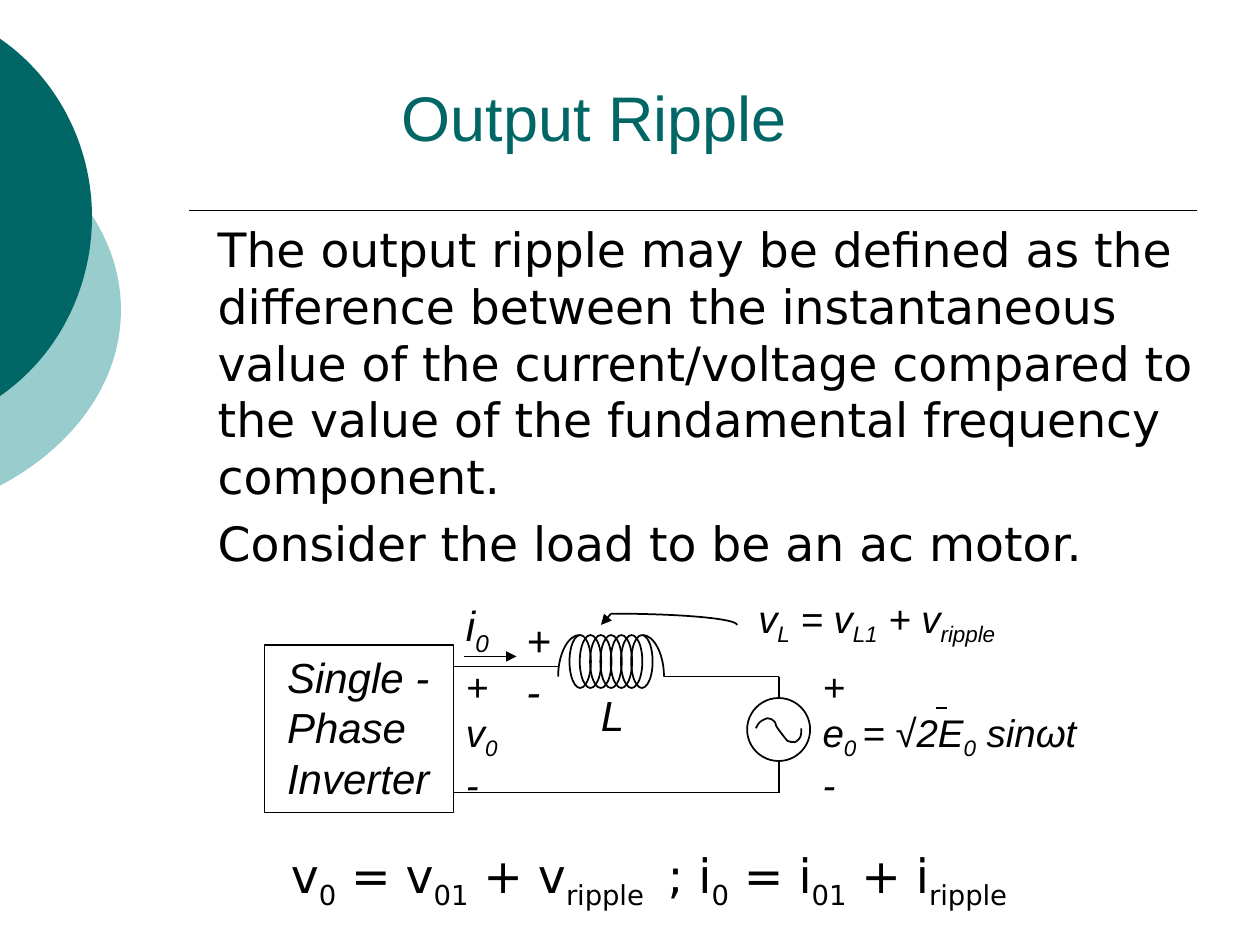
import pptx
import pptx.util
import pptx.dml.color
import pptx.enum.shapes
import pptx.enum.text
import pptx.oxml
import pptx.oxml.ns

Inches = pptx.util.Inches
Pt = pptx.util.Pt
MSO_SHAPE = pptx.enum.shapes.MSO_SHAPE
COLORS = {"teal": "006666", "mint": "99CCCC", "ink": "000000"}


def color(name):
    return pptx.dml.color.RGBColor.from_string(COLORS[name])


def write_text(sp, lines, size=24, font="Arial", ink="ink", italic=False,
               anchor=pptx.enum.text.MSO_ANCHOR.TOP, gap=0):
    tf = sp.text_frame
    tf.word_wrap = True
    tf.auto_size = pptx.enum.text.MSO_AUTO_SIZE.NONE
    tf.vertical_anchor = anchor
    for i, line in enumerate(lines):
        p = tf.paragraphs[0] if i == 0 else tf.add_paragraph()
        p.alignment = pptx.enum.text.PP_ALIGN.LEFT
        p.space_before = Pt(gap if i else 0)
        for j, part in enumerate(line.split("|")):
            if not part:
                continue
            r = p.add_run()
            r.text = part
            r.font.size = Pt(size)
            r.font.name = font
            r.font.italic = italic
            r.font.color.rgb = color(ink)
            if j % 2:
                r.font._element.set("baseline", "-25000")


def add_text(s, x, y, w, h, lines, **fmt):
    sp = s.shapes.add_textbox(Inches(x), Inches(y), Inches(w), Inches(h))
    write_text(sp, lines, **fmt)


def style(sp, fill=None, line="ink"):
    sp.shadow.inherit = False
    if fill:
        sp.fill.solid()
        sp.fill.fore_color.rgb = color(fill)
    else:
        sp.fill.background()
    if line:
        sp.line.color.rgb = color(line)
        sp.line.width = Pt(1)
    else:
        sp.line.fill.background()


def add_outline(s, g, x, y, w, h):
    sp = s.shapes.add_shape(g, Inches(x), Inches(y), Inches(w), Inches(h))
    style(sp)


def add_line(s, x1, y1, x2, y2, arrow=False):
    sp = s.shapes.add_connector(pptx.enum.shapes.MSO_CONNECTOR.STRAIGHT,
                                Inches(x1), Inches(y1), Inches(x2), Inches(y2))
    sp.line.color.rgb = color("ink")
    sp.line.width = Pt(1)
    if arrow:
        sp.line._get_or_add_ln().append(pptx.oxml.parse_xml(
            '<a:tailEnd %s type="triangle"/>' % pptx.oxml.ns.nsdecls("a")))
    sp._element.spPr.append(pptx.oxml.parse_xml(
        "<a:effectLst %s/>" % pptx.oxml.ns.nsdecls("a")))


def add_curve(s, x, y, w, h, points, closed=False, fill=None, line="ink"):
    pts = [(Inches(px), Inches(py)) for px, py in points]
    fb = s.shapes.build_freeform(*pts[0], scale=1.0)
    fb.add_line_segments(pts[1:], close=closed)
    sp = fb.convert_to_shape()
    sp.left, sp.top, sp.width, sp.height = map(Inches, (x, y, w, h))

    dots = ['<a:pt x="%d" y="%d"/>' % pt for pt in pts]
    beziers = "".join("<a:cubicBezTo>%s</a:cubicBezTo>" % "".join(dots[k:k + 3])
                      for k in range(1, len(dots), 3))
    path = sp._element.spPr.find(".//" + pptx.oxml.ns.qn("a:path"))
    path.getparent().replace(path, pptx.oxml.parse_xml(
        '<a:path %s w="%d" h="%d"><a:moveTo>%s</a:moveTo>%s%s</a:path>' % (
            pptx.oxml.ns.nsdecls("a"), Inches(w), Inches(h), dots[0], beziers,
            "<a:close/>" if closed else "")))
    style(sp, fill, line)


def add_backdrop(s, x, y):
    add_curve(s, x - 3.54, y + 0.75, 4.5, 3.42,
              [(3.53, 0.31), (4.14, 0.63), (4.5, 1.15), (4.5, 1.71),
               (4.5, 2.27), (4.14, 2.79), (3.53, 3.11)],
              closed=True, fill="mint", line=None)
    add_curve(s, x - 2.65, y, 3.38, 3.45,
              [(2.64, 0.3), (3.11, 0.62), (3.38, 1.16), (3.38, 1.72),
               (3.38, 2.29), (3.11, 2.83), (2.64, 3.15)],
              closed=True, fill="teal", line=None)
    add_line(s, x + 1.5, y + 1.67, x + 9.5, y + 1.67)


def add_title(s, x, y, w, h):
    sp = s.shapes.title
    sp.left, sp.top, sp.width, sp.height = map(Inches, (x, y, w, h))
    write_text(sp, ["Output Ripple"], size=36, ink="teal",
               anchor=pptx.enum.text.MSO_ANCHOR.BOTTOM)


def add_body(s, x, y, w, h):
    add_text(s, x, y, w, h, [
        "The output ripple may be defined as the difference between the "
        "instantaneous value of the current/voltage compared to the value "
        "of the fundamental frequency component.",
        "Consider the load to be an ac motor.",
    ], size=27, font="DejaVu Sans", gap=5.5)


def add_equation(s, x, y, w, h):
    add_text(s, x, y, w, h,
             ["v|0| = v|01| + v|ripple | ; i|0| = i|01| + i|ripple"],
             size=27, font="DejaVu Sans")


def add_inverter(s, x, y, w, h):
    add_outline(s, MSO_SHAPE.RECTANGLE, x, y, w, h)
    add_text(s, x + 0.08, y, w, h, ["Single -", "Phase", "Inverter"], italic=True)


def add_inductor(s, x, y, w, h):
    turns, loop, margin = 7, 0.17, 0.09
    pitch = (w - 2 * margin - loop) / (turns - 1)
    for n in range(turns):
        add_outline(s, MSO_SHAPE.OVAL, x + margin + n * pitch, y, loop, h)
    add_curve(s, x, y, loop, 0.33, [(0.17, 0), (0.08, 0), (0, 0.15), (0, 0.33)])
    add_curve(s, x + w - loop, y, loop, 0.33,
              [(0, 0), (0.09, 0), (0.17, 0.15), (0.17, 0.33)])
    add_text(s, x + 0.24, y + 0.38, 0.39, 0.5, ["L"], italic=True)


def add_source(s, x, y, d):
    add_outline(s, MSO_SHAPE.OVAL, x, y, d, d)
    add_curve(s, x + 0.07, y + 0.16, 0.36, 0.19, [
        (0, 0.08), (0.02, 0.03), (0.04, 0.02), (0.09, 0),
        (0.11, 0.01), (0.13, 0), (0.14, 0.02),
        (0.16, 0.03), (0.15, 0.04), (0.16, 0.06),
        (0.17, 0.08), (0.24, 0.17), (0.25, 0.18),
        (0.27, 0.19), (0.29, 0.19), (0.31, 0.19),
        (0.36, 0.16), (0.36, 0.14), (0.36, 0.08)])


def add_circuit(s, x, y):
    add_inverter(s, x, y + 0.45, 1.5, 1.33)
    add_inductor(s, x + 2.33, y + 0.37, 0.84, 0.42)
    add_source(s, x + 3.83, y + 0.87, 0.5)

    wires = [(1.5, 0.62, 2.33, 0.62), (1.5, 1.62, 2.25, 1.62),
             (3.17, 0.7, 4.08, 0.7), (4.08, 0.7, 4.08, 0.87),
             (2.17, 1.62, 4.08, 1.62), (4.08, 1.62, 4.08, 1.37)]
    overbar = (5.33, 0.95, 5.42, 0.95)
    for x1, y1, x2, y2 in wires + [overbar]:
        add_line(s, x + x1, y + y1, x + x2, y + y2)

    add_line(s, x + 1.58, y + 0.54, x + 2, y + 0.54, arrow=True)
    add_line(s, x + 2.75, y + 0.2, x + 2.67, y + 0.29, arrow=True)
    add_curve(s, x + 2.75, y + 0.2, 1, 0.09, [(0, 0), (0.55, 0), (1, 0.04), (1, 0.09)])

    labels = [
        (1.5, 0.04, 0.5, 0.5, ["i|0"], 24),
        (1.98, 0.16, 0.4, 0.9, ["+", "-"], 24),
        (1.5, 0.54, 0.5, 1.2, ["+", "v|0", "-"], 22),
        (3.82, 0, 2.43, 0.47, ["v|L| = v|L1| + v|ripple"], 22),
        (4.33, 0.54, 2.3, 1.2, ["+", "e|0 |= √2E|0| sinωt", "-"], 22),
    ]
    for lx, ly, w, h, lines, size in labels:
        add_text(s, x + lx, y + ly, w, h, lines, size=size, italic=True)


def main():
    prs = pptx.Presentation()
    prs.slide_width = Inches(10)
    prs.slide_height = Inches(7.5)
    s = prs.slides.add_slide(prs.slide_layouts[5])
    add_backdrop(s, 0, 0)
    add_title(s, 3.09, 0, 6.5, 1.27)
    add_body(s, 1.63, 1.7, 8.1, 2.95)
    add_circuit(s, 2.1, 4.67)
    add_equation(s, 2.21, 6.67, 6.5, 0.6)
    prs.save("out.pptx")


if __name__ == "__main__":
    main()
